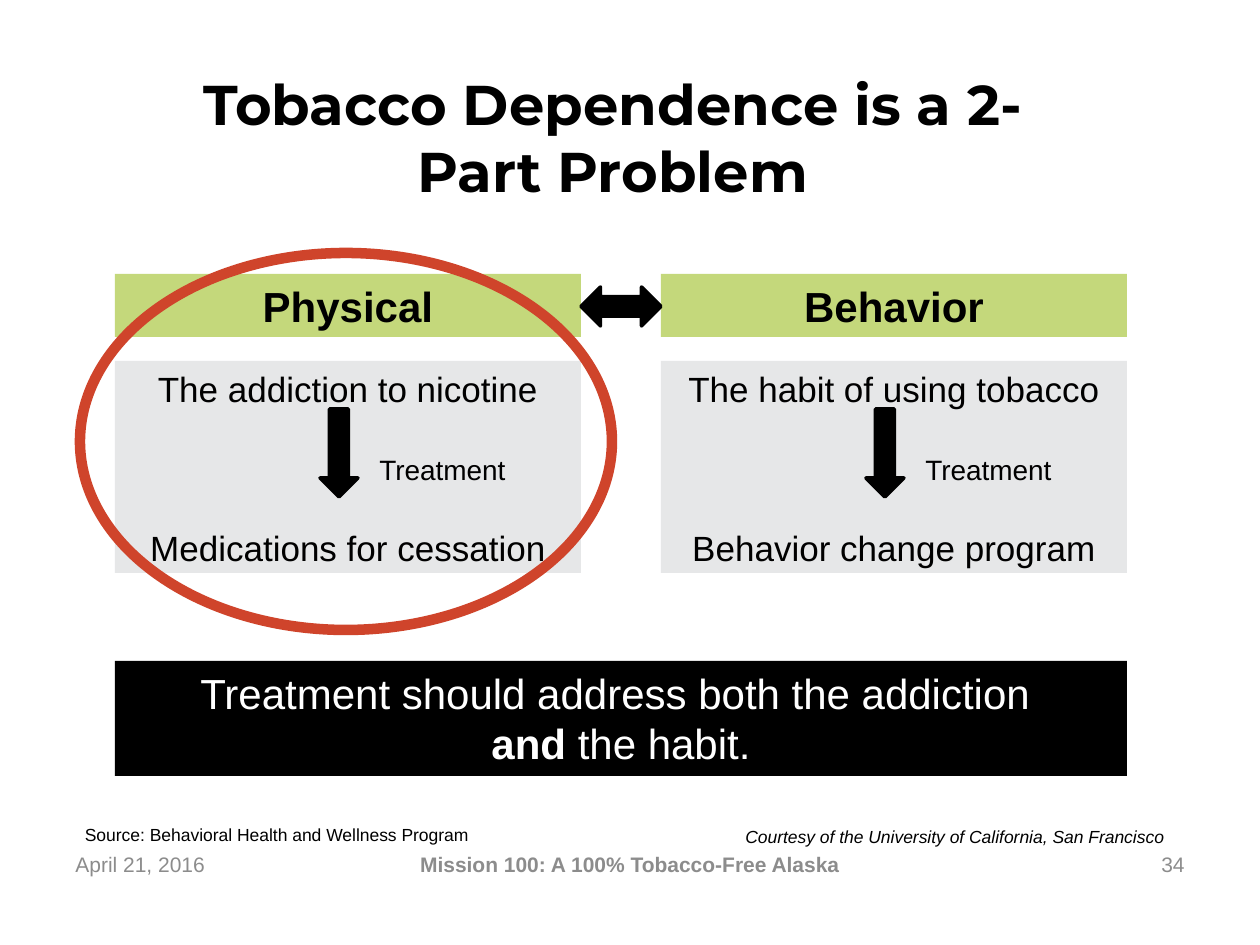
from pptx import Presentation
from pptx.dml.color import RGBColor
from pptx.enum.shapes import MSO_SHAPE as Shape
from pptx.enum.text import MSO_ANCHOR as Anchor, PP_ALIGN as Align
from pptx.util import Emu, Pt

BLACK = RGBColor(0x00, 0x00, 0x00)
WHITE = RGBColor(0xFF, 0xFF, 0xFF)
GREEN = RGBColor(0xC4, 0xD8, 0x7B)
PALE = RGBColor(0xE6, 0xE7, 0xE8)
RED = RGBColor(0xCF, 0x44, 0x2B)
GRAY = RGBColor(0x8C, 0x8C, 0x8C)


def px(length):
    """Turn a length in px into EMU, at 126 px to the inch."""
    return Emu(round(length * 914400 / 126))


def add_para(frame, text, size=20, color=BLACK, font="Arial", bold=False,
             italic=False, align=Align.CENTER, before=0, indent=0, lead=""):
    """Add a paragraph, with an optional bold lead, to a text frame."""
    first = frame.paragraphs[0]
    para = frame.add_paragraph() if first.runs else first
    para.alignment = align
    if before:
        para.space_before = Pt(before)
    if indent:
        para._p.get_or_add_pPr().set("marL", str(px(indent)))
    for part, weight in ((lead, True), (text, bold)):
        if part:
            span = para.add_run()
            span.text = part
            span.font.name = font
            span.font.size = Pt(size)
            span.font.bold = weight
            span.font.italic = italic
            span.font.color.rgb = color


def add_label(page, box, text, anchor=Anchor.TOP, **style):
    """Place a text box holding one paragraph."""
    frame = page.shapes.add_textbox(*map(px, box)).text_frame
    frame.word_wrap = True
    frame.vertical_anchor = anchor
    add_para(frame, text, **style)


def add_figure(page, kind, box, fill=None, line=None, width=2):
    """Place a flat preset shape and return its text frame."""
    shape = page.shapes.add_shape(kind, *map(px, box))
    shape.shadow.inherit = False
    if fill is None:
        shape.fill.background()
    else:
        shape.fill.solid()
        shape.fill.fore_color.rgb = fill
    if line is None:
        shape.line.fill.background()
    else:
        shape.line.color.rgb = line
        shape.line.width = Pt(width)
    frame = shape.text_frame
    frame.word_wrap = True
    frame.vertical_anchor = Anchor.TOP
    return frame


def add_part(page, box, heading, cause, remedy):
    """Draw one part of the problem: heading, cause, arrow and remedy."""
    left, top, width, height = box
    head = add_figure(page, Shape.RECTANGLE, (left, top, width, 63), GREEN)
    add_para(head, heading, size=24, bold=True)
    body = add_figure(page, Shape.RECTANGLE,
                      (left, top + 87, width, height - 87), PALE)
    add_para(body, cause)
    add_para(body, "Treatment", size=16, align=Align.LEFT,
             before=25, indent=252)
    add_para(body, remedy, before=23)
    add_figure(page, Shape.DOWN_ARROW, (left + 205, top + 135, 38, 88),
               BLACK, BLACK)


def add_conclusion(page, box):
    """Draw the black band with the conclusion."""
    frame = add_figure(page, Shape.RECTANGLE, box, BLACK)
    add_para(frame, "Treatment should address both the addiction ",
             size=24, color=WHITE)
    add_para(frame, "the habit.", size=24, color=WHITE, lead="and ")


def add_credits(page, box):
    """Place the source at the left and the courtesy line at the right."""
    left, top, width, height = box
    add_label(page, (left, top, 445, height),
              "Source: Behavioral Health and Wellness Program", size=10)
    add_label(page, (left + width - 485, top + 2, 485, height),
              "Courtesy of the University of California, San Francisco",
              size=10, italic=True)


def add_footer(page, box):
    """Place date, event and page number in one row."""
    left, top, width, height = box
    style = {"size": 12, "color": GRAY, "anchor": Anchor.MIDDLE}
    add_label(page, (left, top, 294, height), "April 21, 2016",
              align=Align.LEFT, **style)
    add_label(page, (left + 311, top, width - 622, height),
              "Mission 100: A 100% Tobacco-Free Alaska", bold=True, **style)
    add_label(page, (left + width - 294, top, 294, height), "34",
              align=Align.RIGHT, **style)


def main():
    """Build the slide and save it."""
    deck = Presentation()
    deck.slide_width, deck.slide_height = px(1260), px(945)
    page = deck.slides.add_slide(deck.slide_layouts[6])
    add_label(page, (184, 63, 858, 158),
              "Tobacco Dependence is a 2-Part Problem",
              size=32, font="Montserrat", bold=True)
    add_part(page, (115, 274, 466, 299), "Physical",
             "The addiction to nicotine", "Medications for cessation")
    add_part(page, (661, 274, 466, 299), "Behavior",
             "The habit of using tobacco", "Behavior change program")
    add_figure(page, Shape.LEFT_RIGHT_ARROW, (581, 287, 80, 39), BLACK, BLACK)
    add_conclusion(page, (115, 661, 1012, 115))
    add_figure(page, Shape.OVAL, (80, 253, 532, 377), line=RED, width=6)
    add_credits(page, (54, 818, 1143, 34))
    add_footer(page, (63, 839, 1134, 50))
    deck.save("out.pptx")


if __name__ == "__main__":
    main()
